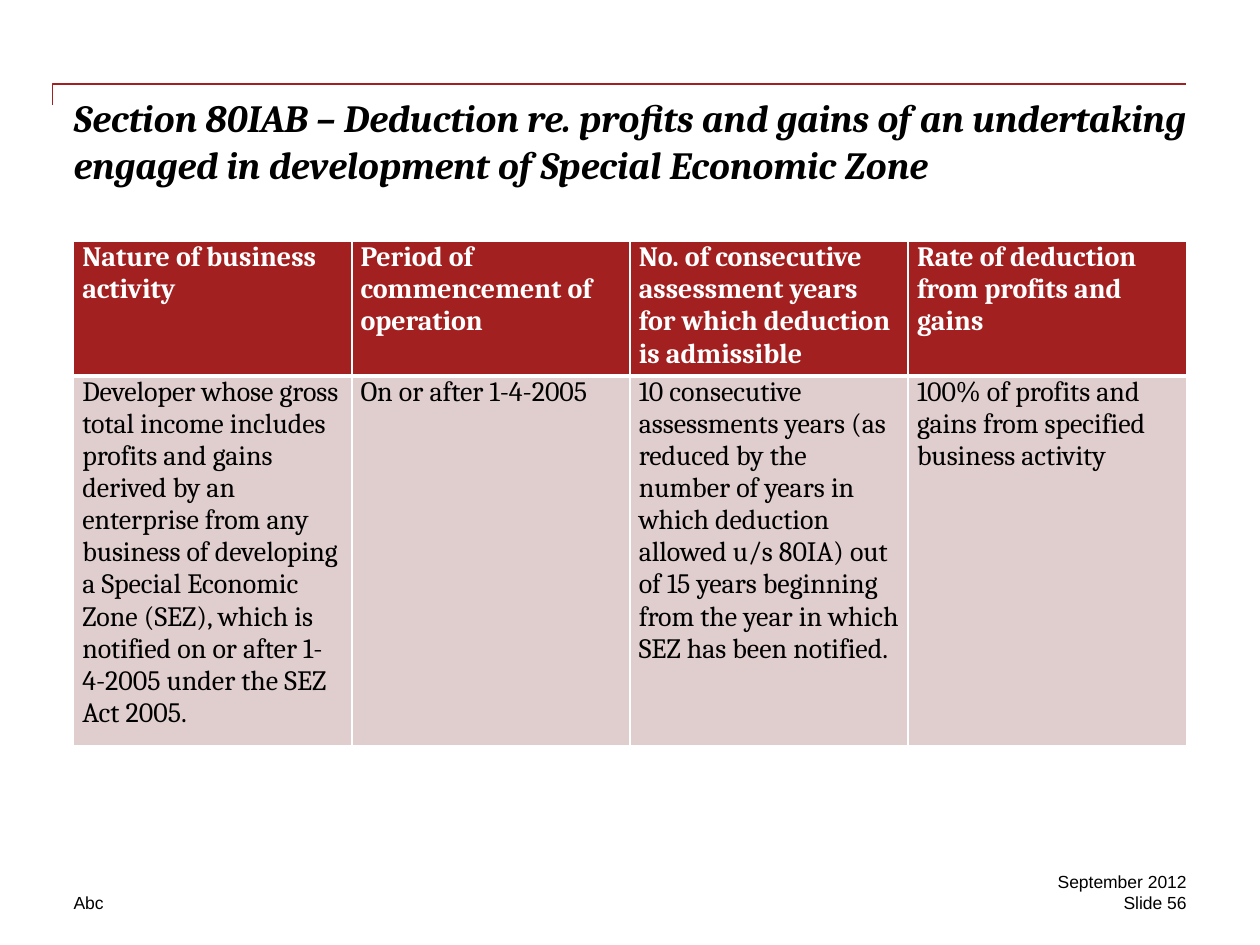
from pptx import Presentation, util as u
from pptx.dml.color import RGBColor
from pptx.enum import text
from pptx.oxml import parse_xml
from pptx.oxml.ns import nsdecls

RED, PINK, WHITE, BLACK = "A32020", "E0CDCD", "FFFFFF", "000000"
COLS, ROWS = 120, 90  # slide grid, twelve units to the inch
LEFT, WIDTH = 7, 106
RIGHT = LEFT + WIDTH
ROW_HEIGHTS = (1.02, 2.8)

TABLE = [
    ["Nature of business activity",
     "Period of commencement of operation",
     "No. of consecutive assessment years for which deduction is admissible",
     "Rate of deduction from profits and gains"],
    ["Developer whose gross total income includes profits and gains derived by an "
     "enterprise from any business of developing a Special Economic Zone (SEZ), "
     "which is notified on or after 1-4-2005 under the SEZ Act 2005.",
     "On or after 1-4-2005",
     "10 consecutive assessments years (as reduced by the number of years in which "
     "deduction allowed u/s 80IA) out of 15 years beginning from the year in which "
     "SEZ has been notified.",
     "100% of profits and gains from specified business activity"],
]
TITLE = ("Section 80IAB – Deduction re. profits and gains of an undertaking "
         "engaged in development of Special Economic Zone")


def grid(n):
    return u.Inches(n / 12)


def rgb(value):
    return RGBColor.from_string(value)


def write(tf, words, color=BLACK, align=text.PP_ALIGN.LEFT, **font):
    p = tf.paragraphs[0]
    p.alignment = align
    r = p.add_run()
    r.text = words
    r.font.color.rgb = rgb(color)
    for name, value in font.items():
        setattr(r.font, name, value)


def add_text(s, box, words, **style):
    tf = s.shapes.add_textbox(*map(grid, box)).text_frame
    margins = dict.fromkeys(
        ("margin_left", "margin_top", "margin_right", "margin_bottom"), 0)
    for name, value in {**margins, "word_wrap": True}.items():
        setattr(tf, name, value)
    write(tf, words, **style)


def add_rule(s):
    """Draw the open line above the title, with its short drop at the left."""
    path = s.shapes.build_freeform(grid(5), grid(10))
    path.add_line_segments([(grid(5), grid(8)), (grid(RIGHT), grid(8))], close=False)
    sp = path.convert_to_shape()
    sp.shadow.inherit = False
    sp.fill.background()
    sp.line.color.rgb = rgb(RED)
    sp.line.width = u.Pt(1)


def set_borders(cell, **widths):
    """Give white borders of the named sides (L, R, T, B) their widths in points."""
    tc_pr = cell._tc.get_or_add_tcPr()
    for i, (side, width) in enumerate(widths.items()):
        tc_pr.insert(i, parse_xml(
            f'<a:ln{side} {nsdecls("a")} w="{u.Pt(width)}"><a:solidFill>'
            f'<a:srgbClr val="{WHITE}"/></a:solidFill></a:ln{side}>'))


def add_table(s):
    table = s.shapes.add_table(len(TABLE), len(TABLE[0]), grid(LEFT), grid(23),
                               grid(WIDTH), u.Inches(sum(ROW_HEIGHTS))).table
    for i, (row, height) in enumerate(zip(TABLE, ROW_HEIGHTS)):
        header = i == 0
        table.rows[i].height = u.Inches(height)
        for j, words in enumerate(row):
            cell = table.cell(i, j)
            for name, inches in {"left": 0.07, "right": 0.07, "top": 0, "bottom": 0}.items():
                setattr(cell, f"margin_{name}", u.Inches(inches))
            cell.fill.solid()
            cell.fill.fore_color.rgb = rgb(RED if header else PINK)
            set_borders(cell, L=1, R=1, T=1 if header else 3, B=3 if header else 1)
            write(cell.text_frame, words, WHITE if header else BLACK,
                  name="Cambria", size=u.Pt(16), bold=header)


def main():
    prs = Presentation()
    prs.slide_width, prs.slide_height = grid(COLS), grid(ROWS)
    s = prs.slides.add_slide(prs.slide_layouts[6])
    add_rule(s)
    add_text(s, (LEFT, 9, WIDTH, 12), TITLE,
             name="Cambria", size=u.Pt(22), bold=True, italic=True)
    add_table(s)
    small = {"name": "Arial", "size": u.Pt(10)}
    add_text(s, (LEFT, 85, 34, 2), "Abc", **small)
    for top, words in ((85, "Slide 56"), (83, "September 2012")):
        add_text(s, (RIGHT - 20, top, 20, 2), words, align=text.PP_ALIGN.RIGHT, **small)
    prs.save("out.pptx")


if __name__ == "__main__":
    main()
